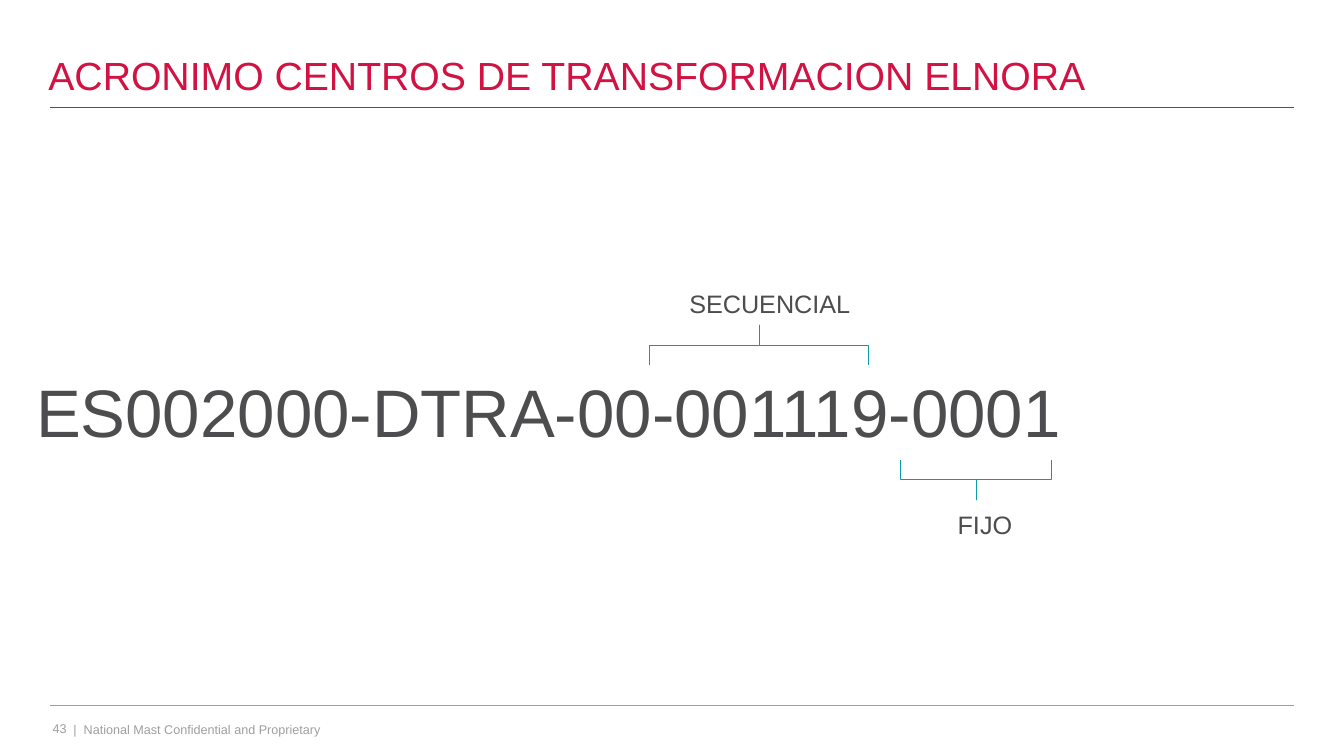
from lxml.etree import SubElement
from pptx import Presentation
from pptx.dml.color import RGBColor
from pptx.enum.shapes import MSO_CONNECTOR, MSO_SHAPE
from pptx.enum.text import MSO_ANCHOR, MSO_AUTO_SIZE, PP_ALIGN
from pptx.oxml.ns import qn
from pptx.util import Inches, Pt

RED = RGBColor(0xD1, 0x12, 0x42)
GRAY = RGBColor(0x9D, 0x9F, 0xA2)
DARK = RGBColor(0x4D, 0x4D, 0x4F)
TEAL = RGBColor(0x0C, 0x9B, 0xA8)

TITLE = {"text": "ACRONIMO CENTROS DE TRANSFORMACION ELNORA",
         "at": (0.38, 0.31, 12.43, 0.72), "size": 28, "color": RED,
         "anchor": MSO_ANCHOR.BOTTOM, "align": PP_ALIGN.LEFT, "spacing": 0.9}
LABEL = {"size": 18, "color": DARK, "after": 18}
FOOTER = {"size": 9, "color": GRAY, "anchor": MSO_ANCHOR.MIDDLE}
TEXTS = [
    {"text": "|  National Mast Confidential and Proprietary",
     "at": (0.63, 7.11, 3.57, 0.25), **FOOTER},
    {"text": "43", "at": (0.36, 7.13, 0.4, 0.2), "align": PP_ALIGN.RIGHT, **FOOTER},
    {"text": "ES002000-DTRA-00-001119-0001", "at": (0.26, 3.62, 11.17, 0.91),
     "size": 48, "color": DARK},
    {"text": "FIJO", "at": (9.4, 5, 1.03, 0.4), **LABEL},
    {"text": "SECUENCIAL", "at": (6.73, 2.81, 1.81, 0.4),
     "align": PP_ALIGN.CENTER, "wrap": False, **LABEL},
]
RULES = [(1.07, RED), (7, GRAY)]
RULE_LEFT, RULE_RIGHT = 0.5, 12.83
BRACES = [((7.33, 2.34, 0.4, 2.17), 270), ((9.48, 4.01, 0.4, 1.5), 90)]


def write_text(shape, item):
    frame = shape.text_frame
    para = frame.paragraphs[0]
    span = para.add_run()
    frame_format = {"word_wrap": item.get("wrap", True),
                    "auto_size": MSO_AUTO_SIZE.NONE,
                    "vertical_anchor": item.get("anchor", MSO_ANCHOR.TOP)}
    para_format = {"alignment": item.get("align", PP_ALIGN.LEFT),
                   "line_spacing": item.get("spacing", 1.0),
                   "space_before": Pt(0),
                   "space_after": Pt(item.get("after", 0))}
    font_format = {"name": "Arial", "size": Pt(item["size"])}
    for target, values in ((frame, frame_format), (para, para_format),
                           (span, {"text": item["text"]}), (span.font, font_format)):
        for name, value in values.items():
            setattr(target, name, value)
    span.font.color.rgb = item["color"]


def style_line(shape, color):
    shape.line.color.rgb = color
    shape.line.width = Pt(0.5)


def add_rule(slide, top, color):
    rule = slide.shapes.add_connector(MSO_CONNECTOR.STRAIGHT, Inches(RULE_LEFT), Inches(top),
                                      Inches(RULE_RIGHT), Inches(top))
    style_line(rule, color)
    SubElement(rule._element.spPr, qn("a:effectLst"))


def add_brace(slide, at, rotation):
    brace = slide.shapes.add_shape(MSO_SHAPE.RIGHT_BRACE, *map(Inches, at))
    brace.rotation = rotation
    brace.adjustments[0] = 0
    brace.adjustments[1] = 0.5
    brace.shadow.inherit = False
    brace.fill.background()
    style_line(brace, TEAL)


def main():
    """Build the slide that explains the transformer centre code."""
    deck = Presentation()
    deck.slide_width, deck.slide_height = Inches(13.33), Inches(7.5)
    slide = deck.slides.add_slide(deck.slide_layouts[5])
    title = slide.shapes.title
    title.left, title.top, title.width, title.height = map(Inches, TITLE["at"])
    write_text(title, TITLE)
    for top, color in RULES:
        add_rule(slide, top, color)
    for item in TEXTS:
        write_text(slide.shapes.add_textbox(*map(Inches, item["at"])), item)
    for at, rotation in BRACES:
        add_brace(slide, at, rotation)
    deck.save("out.pptx")


if __name__ == "__main__":
    main()
